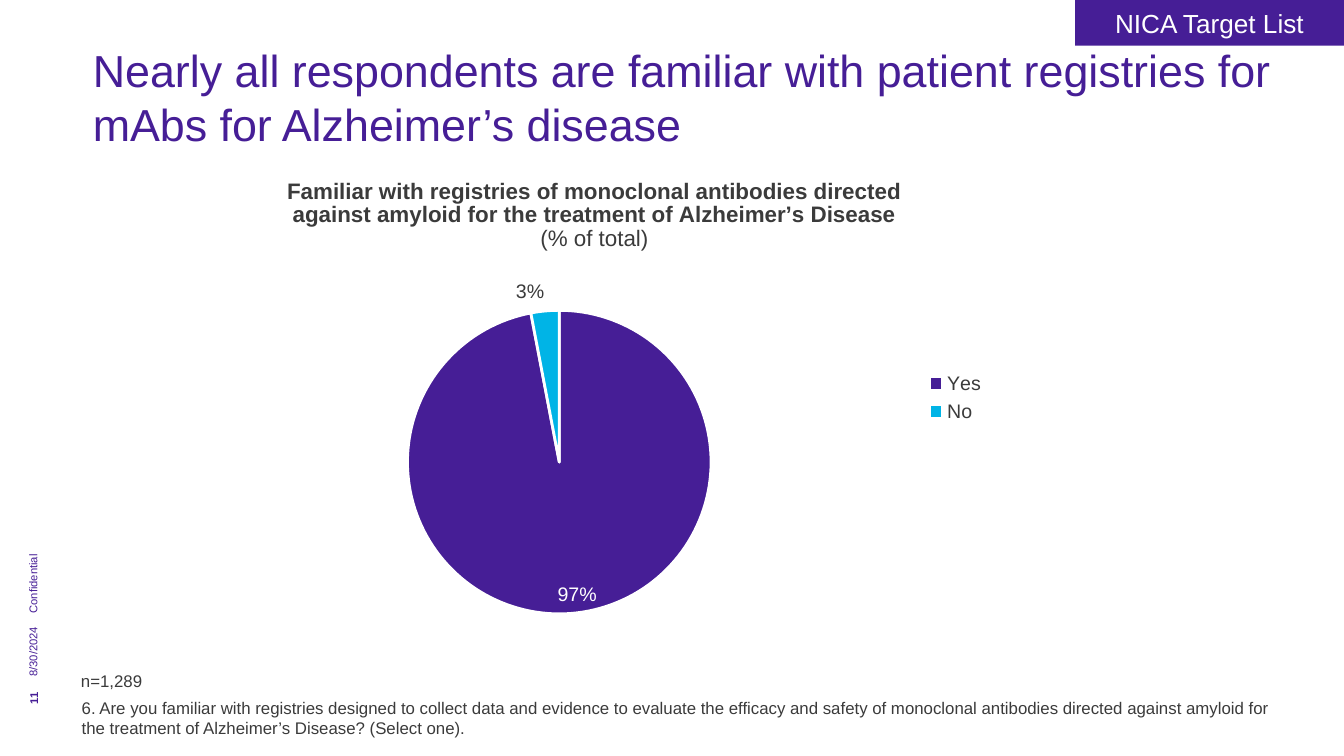
from lxml import etree
from pptx import Presentation
from pptx.chart.data import CategoryChartData
from pptx.dml.color import RGBColor
from pptx.enum.chart import XL_CHART_TYPE, XL_LABEL_POSITION, XL_LEGEND_POSITION
from pptx.enum.shapes import MSO_SHAPE
from pptx.enum.text import MSO_ANCHOR, PP_ALIGN
from pptx.oxml.ns import qn
from pptx.util import Inches, Pt

PURPLE, CYAN, GREY, WHITE = (
    RGBColor.from_string(c) for c in ("461E96", "00B4E6", "3B3B3B", "FFFFFF"))


def write(shape, text, size, color, inset=(0, 0), align=PP_ALIGN.LEFT, bold=False):
    """Fill a shape with one run; inset is (sides, top and bottom) in inches."""
    frame = shape.text_frame
    frame.word_wrap = True
    frame.margin_left = frame.margin_right = Inches(inset[0])
    frame.margin_top = frame.margin_bottom = Inches(inset[1])
    para = frame.paragraphs[0]
    para.alignment = align
    run = para.add_run()
    run.text = text
    font = run.font
    font.name, font.size, font.bold = "Arial", Pt(size), bold
    font.color.rgb = color


def place(part, index, mode="edge", **spots):
    """Pin a chart part at fractions of the chart area, or shift it by them."""
    for old in part.findall(qn("c:layout")):
        part.remove(old)
    layout = etree.Element(qn("c:layout"))
    part.insert(index, layout)
    manual = etree.SubElement(layout, qn("c:manualLayout"))
    if "w" in spots:
        etree.SubElement(manual, qn("c:layoutTarget")).set("val", "inner")
    for axis in "xy":
        etree.SubElement(manual, qn(f"c:{axis}Mode")).set("val", mode)
    for key, value in spots.items():
        etree.SubElement(manual, qn(f"c:{key}")).set("val", str(value))


prs = Presentation()
prs.slide_width = Inches(10)
prs.slide_height = Inches(10) * 9 // 16
slide = prs.slides.add_slide(prs.slide_layouts[6])
shapes = slide.shapes

# Title
title = shapes.add_textbox(Inches(0.69), Inches(0.32), Inches(9.02), Inches(0.43))
write(
    title,
    "Nearly all respondents are familiar with patient registries "
    "for mAbs for Alzheimer’s disease", 24, PURPLE)

# Side notes, reading upwards
for text, left, top, width, bold in (
    ("8/30/2024", 0.02, 4.74, 0.47, False),
    ("Confidential", -0.7, 3.55, 1.91, False),
    ("11", 0.16, 5.08, 0.2, True),
):
    note = shapes.add_textbox(Inches(left), Inches(top), Inches(width), Inches(0.12))
    note.rotation = 270
    write(note, text, 6, PURPLE, bold=bold)

# Pie chart
data = CategoryChartData(number_format="0%")
data.categories = ["Yes", "No"]
data.add_series("Series 1", (0.97, 0.03))
chart = shapes.add_chart(
    XL_CHART_TYPE.PIE, Inches(1.45), Inches(1.18), Inches(5.96), Inches(3.53), data).chart
chart.font.name, chart.font.size = "Arial", Pt(10)
chart.font.color.rgb = PURPLE

heading = chart.chart_title.text_frame
lines = (
    ("Familiar with registries of monoclonal antibodies directed "
     "against amyloid for the treatment of Alzheimer’s Disease", True),
    ("(% of total)", False),
)
for i, (text, bold) in enumerate(lines):
    para = heading.add_paragraph() if i else heading.paragraphs[0]
    run = para.add_run()
    run.text = text
    run.font.name, run.font.size, run.font.bold = "Arial", Pt(12), bold
    run.font.color.rgb = GREY

chart.has_legend = True
legend = chart.legend
legend.position = XL_LEGEND_POSITION.RIGHT
legend.include_in_layout = False
legend.font.name, legend.font.size = "Arial", Pt(10.5)
legend.font.color.rgb = GREY

plot = chart.plots[0]
plot.vary_by_categories = True
series = plot.series[0]
labels = series.data_labels
labels.show_value, labels.show_percentage = True, False
labels.number_format, labels.number_format_is_linked = "0%", False
labels.font.name, labels.font.size = "Arial", Pt(10.5)

slices = (
    (PURPLE, WHITE, XL_LABEL_POSITION.INSIDE_END),
    (CYAN, GREY, XL_LABEL_POSITION.OUTSIDE_END),
)
for i, (color, ink, spot) in enumerate(slices):
    point = series.points[i]
    point.format.fill.solid()
    point.format.fill.fore_color.rgb = color
    point.format.line.color.rgb = WHITE
    point.format.line.width = Pt(1.5)
    label = point.data_label
    label.font.name, label.font.size = "Arial", Pt(10.5)
    label.font.color.rgb = ink
    label.position = spot

area = chart.element.find(qn("c:chart"))
place(area.find(qn("c:title")), 1, x=0.11, y=0.03)
place(area.find(qn("c:plotArea")), 0, x=0.26, y=0.32, w=0.39, h=0.64)
place(area.find(qn("c:legend")), 1, x=0.91, y=0.44)
place(next(area.iter(qn("c:dLbl"))), 1, "factor", x=0.03, y=0)

# Footnotes
query = shapes.add_textbox(Inches(0.51), Inches(5.14), Inches(9.2), Inches(0.4))
write(
    query,
    "6. Are you familiar with registries designed to collect data and evidence to "
    "evaluate the efficacy and safety of monoclonal antibodies directed against "
    "amyloid for the treatment of Alzheimer’s Disease? (Select one).",
    9, GREY, (0.1, 0.05))
count = shapes.add_textbox(Inches(0.29), Inches(4.99), Inches(1.08), Inches(0.24))
write(count, "n=1,289", 9, GREY, align=PP_ALIGN.CENTER)

# Corner tag
tag = shapes.add_shape(MSO_SHAPE.RECTANGLE, Inches(8), 0, Inches(2), Inches(0.34))
tag.shadow.inherit = False
tag.fill.solid()
tag.fill.fore_color.rgb = PURPLE
tag.line.fill.background()
tag.text_frame.vertical_anchor = MSO_ANCHOR.MIDDLE
write(tag, "NICA Target List", 14, WHITE, (0.1, 0.05), PP_ALIGN.CENTER)

prs.save("out.pptx")
